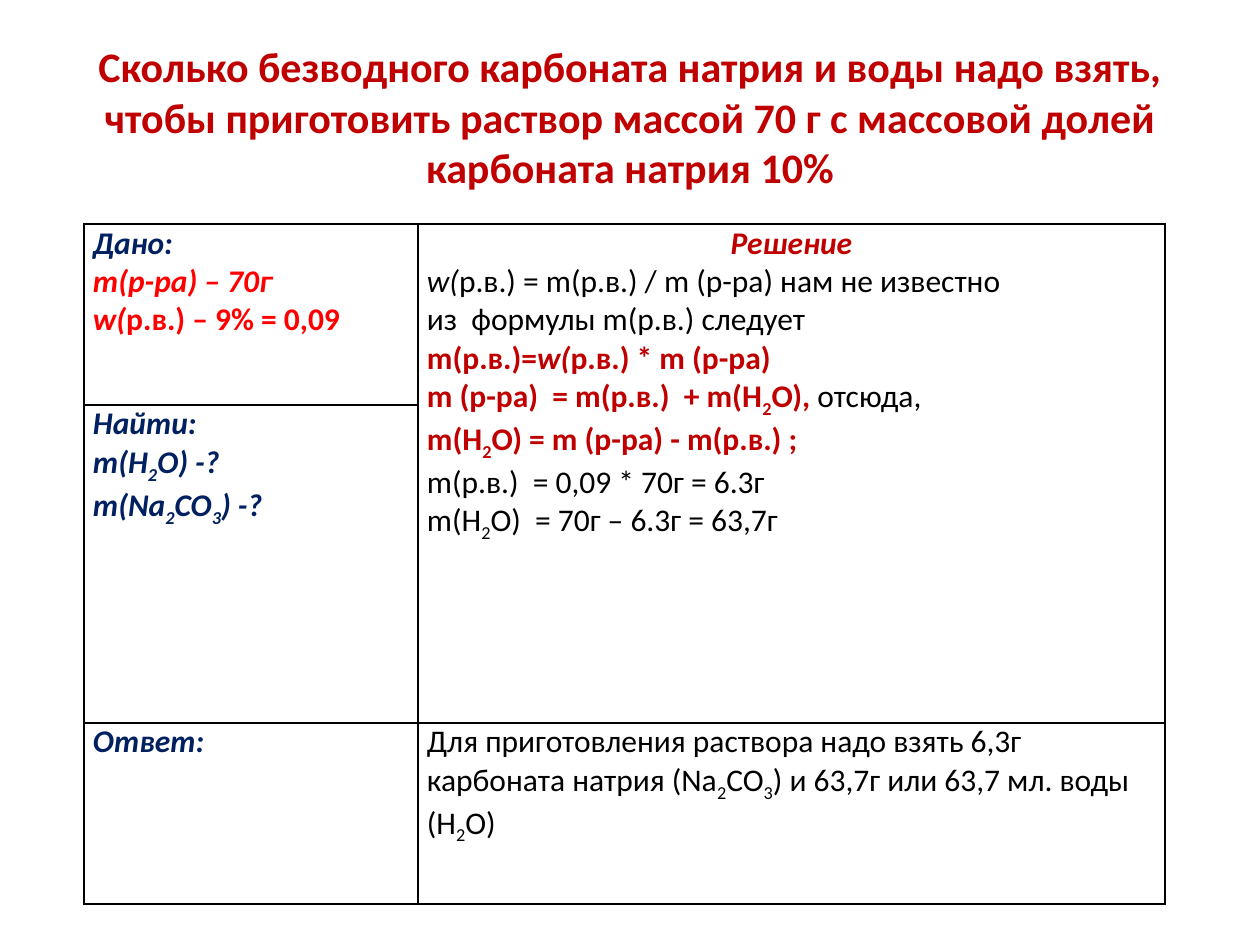
from dataclasses import dataclass

import lxml.etree
import pptx
import pptx.dml.color
import pptx.enum.text
import pptx.oxml.ns
import pptx.util

EMU_PER_PX = 914400 / 126
COLORS = {
    "crimson": "C00000",
    "navy": "002060",
    "red": "FF0000",
    "black": "000000",
    "white": "FFFFFF",
}
CENTER = pptx.enum.text.PP_ALIGN.CENTER
LEFT = pptx.enum.text.PP_ALIGN.LEFT
HARD_SPACE = chr(160)


@dataclass(frozen=True)
class Phrase:
    """Text in one format; "_" lowers the next character, "~" is a hard space."""
    text: str
    color: str = "black"
    bold: bool = False
    italic: bool = False


@dataclass(frozen=True)
class Line:
    phrases: tuple[Phrase, ...]
    align: pptx.enum.text.PP_ALIGN = LEFT


@dataclass(frozen=True)
class Entry:
    row: int
    column: int
    lines: tuple[Line, ...]


def px(length: int) -> int:
    return round(length * EMU_PER_PX)


def rgb(name: str) -> pptx.dml.color.RGBColor:
    return pptx.dml.color.RGBColor.from_string(COLORS[name])


def navy(text: str) -> Line:
    return Line((Phrase(text, "navy", True, True),))


def plain(text: str) -> Line:
    return Line((Phrase(text),))


def formula(text: str, italic: bool = False) -> Phrase:
    return Phrase(text, "crimson", True, italic)


def add_text(paragraph, text: str, *, size: int = 18, color: str = "black",
             bold: bool = False, italic: bool = False) -> None:
    first, *lowered = text.replace("~", HARD_SPACE).split("_")
    pieces = [(first, False)]
    for piece in lowered:
        pieces += [(piece[0], True), (piece[1:], False)]
    for piece, subscript in pieces:
        if not piece:
            continue
        run = paragraph.add_run()
        run.text = piece
        font = run.font
        font.name, font.size = "Calibri", pptx.util.Pt(size)
        font.bold, font.italic = bold, italic
        font.color.rgb = rgb(color)
        if subscript:
            run._r.get_or_add_rPr().set("baseline", "-25000")


def format_cell(cell) -> None:
    """Give a cell its margins, thin black borders and white fill."""
    cell.margin_left = cell.margin_right = px(9)
    cell.margin_top = cell.margin_bottom = 0
    properties = cell._tc.get_or_add_tcPr()
    qn = pptx.oxml.ns.qn
    for side in ("a:lnL", "a:lnR", "a:lnT", "a:lnB"):
        border = lxml.etree.SubElement(properties, qn(side), w=str(pptx.util.Pt(1)))
        fill = lxml.etree.SubElement(border, qn("a:solidFill"))
        lxml.etree.SubElement(fill, qn("a:srgbClr"), val=COLORS["black"])
    cell.fill.solid()
    cell.fill.fore_color.rgb = rgb("white")


def write_entry(table, entry: Entry) -> None:
    frame = table.cell(entry.row, entry.column).text_frame
    for index, line in enumerate(entry.lines):
        paragraph = frame.add_paragraph() if index else frame.paragraphs[0]
        paragraph.alignment = line.align
        for phrase in line.phrases:
            add_text(paragraph, phrase.text, color=phrase.color,
                     bold=phrase.bold, italic=phrase.italic)


def add_question(slide) -> None:
    question = slide.shapes.add_textbox(px(63), px(38), px(1134), px(157))
    frame = question.text_frame
    frame.word_wrap = True
    frame.vertical_anchor = pptx.enum.text.MSO_ANCHOR.MIDDLE
    frame.paragraphs[0].alignment = CENTER
    add_text(
        frame.paragraphs[0],
        "Сколько безводного карбоната натрия и воды надо взять, чтобы приготовить "
        "раствор массой 70 г с массовой долей карбоната натрия 10%",
        size=24, color="crimson", bold=True)


def add_solution(slide) -> None:
    widths, heights = (334, 747), (181, 302, 181)
    table = slide.shapes.add_table(
        len(heights), len(widths), px(84), px(224),
        px(sum(widths)), px(sum(heights))).table
    table.first_row = table.horz_banding = False
    for column, width in zip(table.columns, widths):
        column.width = px(width)
    for row, height in zip(table.rows, heights):
        row.height = px(height)
    for cell in table.iter_cells():
        format_cell(cell)
    table.cell(0, 1).merge(table.cell(1, 1))
    for entry in ENTRIES:
        write_entry(table, entry)


ENTRIES = (
    Entry(0, 0, (
        navy("Дано:"),
        Line((Phrase("m(р-ра) – 70г", "red", True, True),)),
        Line((Phrase("w(", "red", True, True),
              Phrase("р.в.) – 9% = 0,09", "red", True))),
    )),
    Entry(0, 1, (
        Line((formula("Решение", italic=True),), CENTER),
        Line((Phrase("w(", italic=True),
              Phrase("р.в.) =~m(р.в.) /~m~(р-ра) нам не известно "
                     "из~~формулы~m(р.в.) следует~"))),
        Line((formula("m(р.в.)="), formula("w(", italic=True),
              formula("р.в.) *~m~(р-ра)"))),
        Line((formula("m~(р-ра)~~=~m(р.в.)~~+~m(H_2O), "), Phrase("отсюда,"))),
        Line((formula("m(H_2O) =~m~(р-ра) -~m(р.в.) ;"),)),
        plain("m(р.в.)~~= 0,09 * 70г = 6.3г"),
        plain("m(H_2O)~~= 70г – 6.3г = 63,7г"),
    )),
    Entry(1, 0, (navy("Найти:"), navy("m(H_2O) -?"), navy("m(Na_2CO_3) -?"))),
    Entry(2, 0, (navy("Ответ:"),)),
    Entry(2, 1, (
        plain("Для приготовления раствора надо взять 6,3г карбоната натрия "
              "(Na_2CO_3) и 63,7г или 63,7 мл. воды (H_2O)"),
    )),
)


def main() -> None:
    deck = pptx.Presentation()
    deck.slide_width, deck.slide_height = px(1260), px(945)
    slide = deck.slides.add_slide(deck.slide_layouts[6])
    add_question(slide)
    add_solution(slide)
    deck.save("out.pptx")


if __name__ == "__main__":
    main()
